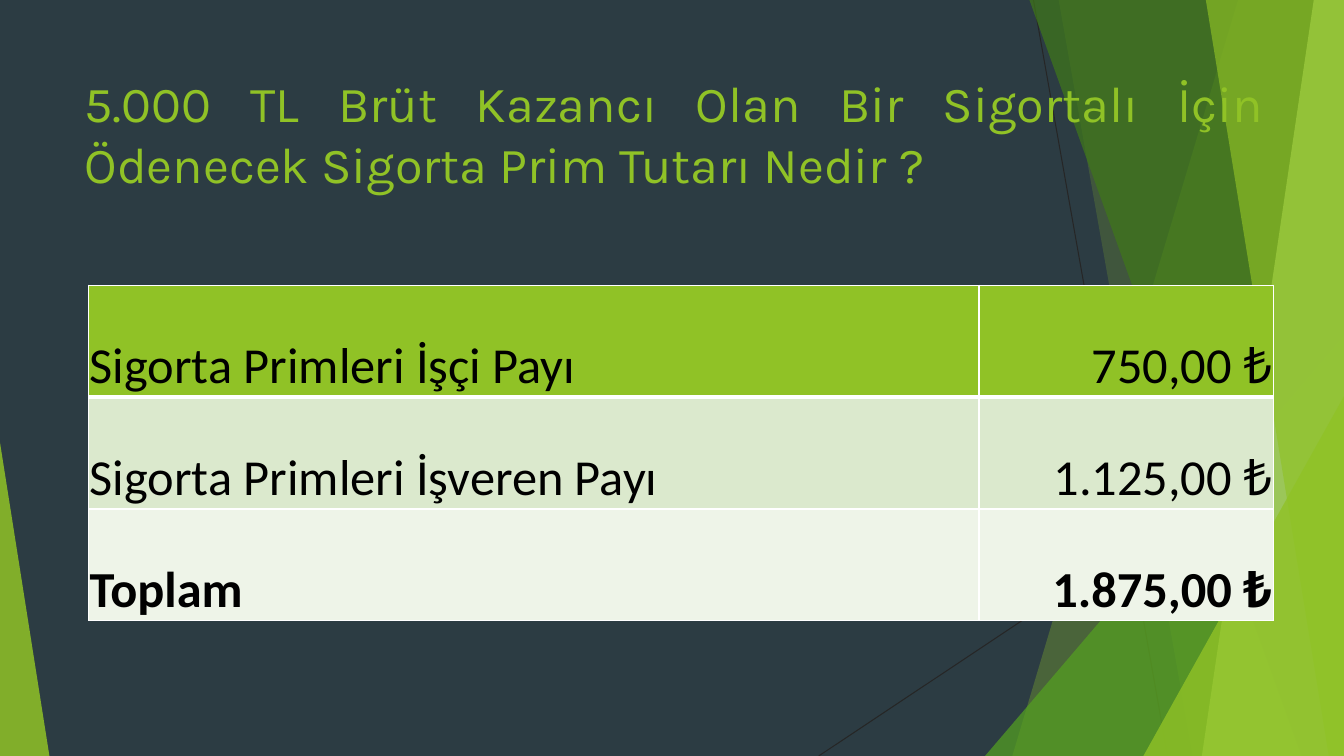
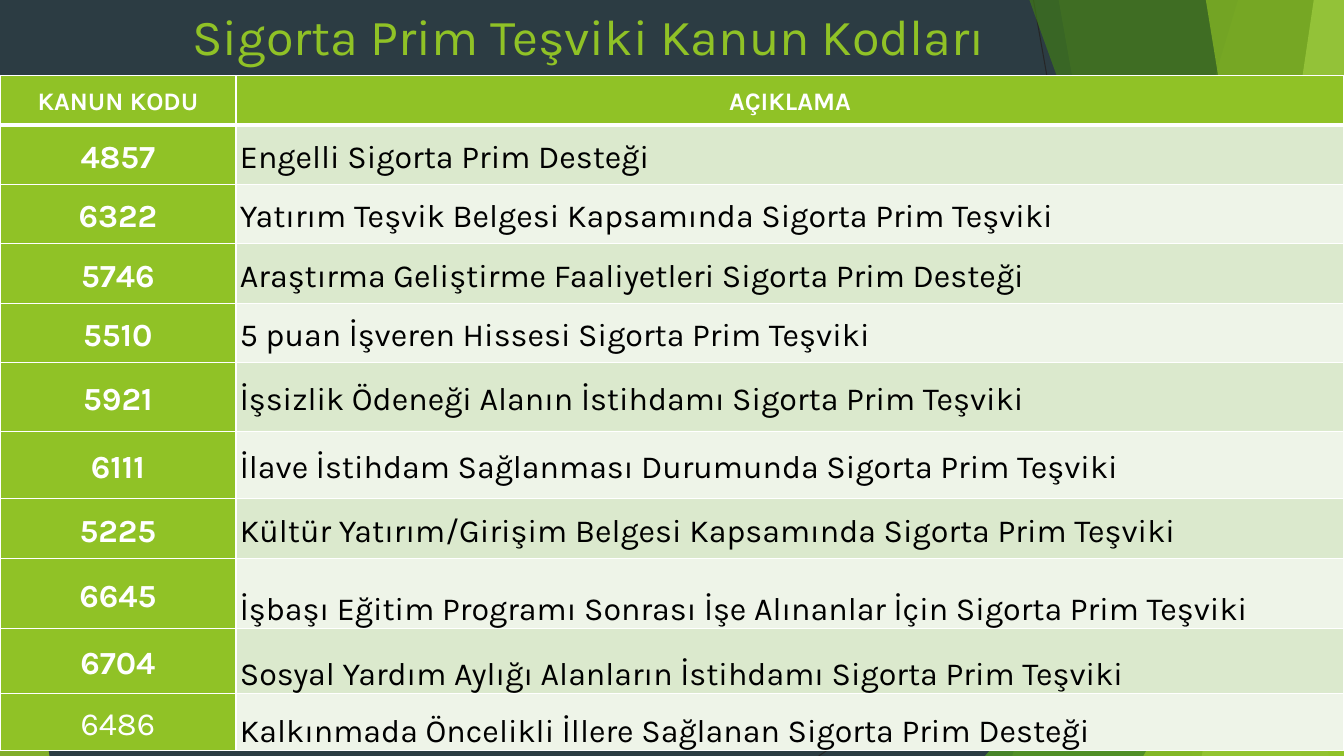
from lxml import etree
from pptx import Presentation
from pptx.dml.color import RGBColor
from pptx.enum.shapes import MSO_CONNECTOR, MSO_SHAPE
from pptx.enum.text import MSO_ANCHOR, PP_ALIGN
from pptx.oxml.ns import qn
from pptx.util import Emu, Pt

PX = 9144
WIDTH, HEIGHT = 1333, 750

NAVY = RGBColor(0x2C, 0x3C, 0x43)
GREEN = RGBColor(0x90, 0xC2, 0x26)
LEAF = RGBColor(0x54, 0xA0, 0x21)
FOREST = RGBColor(0x3F, 0x78, 0x19)
LIME = RGBColor(0xC0, 0xE4, 0x74)
BAND = RGBColor(0xDB, 0xE9, 0xCD)
PALE = RGBColor(0xEE, 0xF4, 0xE8)
CHARCOAL = RGBColor(0x26, 0x26, 0x26)
WHITE = RGBColor(0xFF, 0xFF, 0xFF)
BLACK = RGBColor(0x00, 0x00, 0x00)

STRAIGHT = MSO_CONNECTOR.STRAIGHT
PEAK = MSO_SHAPE.ISOSCELES_TRIANGLE
TOP, MIDDLE, BOTTOM = MSO_ANCHOR.TOP, MSO_ANCHOR.MIDDLE, MSO_ANCHOR.BOTTOM
LEFT, CENTER, RIGHT, JUSTIFY = PP_ALIGN.LEFT, PP_ALIGN.CENTER, PP_ALIGN.RIGHT, PP_ALIGN.JUSTIFY

LINES = [(1025, 0, 1158, HEIGHT), (WIDTH, 403, 812, HEIGHT)]
FACETS = [
    ("blade", (1228, 1004), GREEN, 30),
    ("blade", (1050, 1183), GREEN, 20),
    ("peak", (977, 333, 356, 417, 1), LEAF, 72),
    ("blade", (1021, 1291), FOREST, 70),
    ("blade", (1303, 1192), LIME, 70),
    ("blade", (1196, 1318), GREEN, 65),
    ("peak", (1134, 393, 199, 357, 1), GREEN, 80),
    ("peak", (0, 439, 49, 311, 0), GREEN, 85),
]


def px(n):
    return Emu(n * PX)


def apply(target, values):
    for name, value in values.items():
        setattr(target, name, value)


def text_format(color, size, name, bold=False, align=LEFT, spacing=None, anchor=MIDDLE, margins=(4, 0, 4, 0)):
    sides = ("margin_left", "margin_top", "margin_right", "margin_bottom")
    frame = {side: px(n) for side, n in zip(sides, margins)}
    return {
        "frame": {"vertical_anchor": anchor, **frame},
        "para": {"alignment": align, "line_spacing": spacing},
        "font": {"size": Pt(size), "name": name, "bold": bold},
        "color": color,
    }


def title_format(align):
    return text_format(GREEN, 36, "Karla", align=align, anchor=TOP, margins=(10, 5, 10, 5))


def amount_format(align, bold=False):
    return text_format(BLACK, 36, "Calibri", bold, align, None, BOTTOM, (1, 1, 1, 0))


def code_format(size=23, bold=True):
    return text_format(WHITE, size, "Karla", bold, CENTER, 1.15)


def law_format(anchor):
    return text_format(BLACK, 23, "Karla", spacing=1.15, anchor=anchor)


class Deck:
    """Hold the shared style and the slide being built."""

    def __init__(self):
        self.prs = Presentation()
        self.prs.slide_width, self.prs.slide_height = px(WIDTH), px(HEIGHT)
        fill = self.prs.slide_master.background.fill
        fill.solid()
        fill.fore_color.rgb = NAVY
        self.s = None

    def slide(self, title, box, align):
        self.s = self.prs.slides.add_slide(self.prs.slide_layouts[6])
        self.facets()
        tf = self.s.shapes.add_textbox(*map(px, box)).text_frame
        tf.word_wrap = True
        fmt = title_format(align)
        apply(tf, fmt["frame"])
        self.text(tf, title, fmt)

    def facets(self):
        shapes = self.s.shapes.add_group_shape().shapes
        for ends in LINES:
            self.line(shapes, ends)
        makers = {"blade": self.blade, "peak": self.peak}
        for kind, geometry, color, alpha in FACETS:
            sp = makers[kind](shapes, *geometry)
            self.paint(sp, color, alpha)

    def line(self, shapes, ends):
        sp = shapes.add_connector(STRAIGHT, *map(px, ends))
        sp.line.color.rgb = CHARCOAL
        sp.line.width = Pt(0.75)
        etree.SubElement(sp.element.spPr, qn("a:effectLst"))

    def blade(self, shapes, top, bottom):
        builder = shapes.build_freeform(top, 0, scale=PX)
        builder.add_line_segments([(WIDTH, 0), (WIDTH, HEIGHT), (bottom, HEIGHT)], close=True)
        return builder.convert_to_shape()

    def peak(self, shapes, x, y, w, h, apex):
        sp = shapes.add_shape(PEAK, px(x), px(y), px(w), px(h))
        sp.adjustments[0] = apex
        return sp

    def paint(self, sp, color, alpha):
        sp.shadow.inherit = False
        sp.fill.solid()
        sp.fill.fore_color.rgb = color
        sp.line.fill.background()
        clr = sp.element.spPr.find(".//" + qn("a:srgbClr"))
        etree.SubElement(clr, qn("a:alpha"), val=str(alpha * 1000))

    def text(self, tf, words, fmt):
        p = tf.paragraphs[0]
        apply(p, fmt["para"])
        r = p.add_run()
        r.text = words
        apply(r.font, fmt["font"])
        r.font.color.rgb = fmt["color"]

    def table(self, x, y, cols, rows, content, key_column=False):
        size = map(px, (x, y, sum(cols), sum(rows)))
        table = self.s.shapes.add_table(len(rows), len(cols), *size).table
        for col, width in zip(table.columns, cols):
            col.width = px(width)
        for row, height in zip(table.rows, rows):
            row.height = px(height)
        for i, line in enumerate(content):
            for j, (words, fmt) in enumerate(line):
                cell = table.cell(i, j)
                green = i == 0 or (key_column and j == 0)
                apply(cell, fmt["frame"])
                self.borders(cell, 3 if i == 1 else 1, 3 if i == 0 else 1)
                cell.fill.solid()
                cell.fill.fore_color.rgb = GREEN if green else (PALE, BAND)[i % 2]
                self.text(cell.text_frame, words, fmt)

    def borders(self, cell, top, bottom):
        tc_pr = cell._tc.get_or_add_tcPr()
        for tag, width in (("a:lnL", 1), ("a:lnR", 1), ("a:lnT", top), ("a:lnB", bottom)):
            ln = etree.SubElement(tc_pr, qn(tag), w=str(Pt(width)))
            fill = etree.SubElement(ln, qn("a:solidFill"))
            etree.SubElement(fill, qn("a:srgbClr"), val=str(WHITE))


def premium_slide(deck):
    deck.slide(
        "5.000 TL Brüt Kazancı Olan Bir Sigortalı İçin Ödenecek Sigorta Prim Tutarı Nedir ?",
        (74, 67, 1189, 144),
        JUSTIFY,
    )
    amounts = [
        ("Sigorta Primleri İşçi Payı", "750,00 ₺", False),
        ("Sigorta Primleri İşveren Payı", "1.125,00 ₺", False),
        ("Toplam", "1.875,00 ₺", True),
    ]
    content = [
        [(label, amount_format(LEFT, bold)), (amount, amount_format(RIGHT, bold))]
        for label, amount, bold in amounts
    ]
    deck.table(88, 283, [883, 292], [111] * 3, content)


def codes_slide(deck):
    deck.slide("Sigorta Prim Teşviki Kanun Kodları", (181, 0, 940, 75), LEFT)
    laws = [
        ("4857", "Engelli Sigorta Prim Desteği", 59, MIDDLE),
        ("6322", "Yatırım Teşvik Belgesi Kapsamında Sigorta Prim Teşviki", 59, MIDDLE),
        ("5746", "Araştırma Geliştirme Faaliyetleri Sigorta Prim Desteği", 59, MIDDLE),
        ("5510", "5 puan İşveren Hissesi Sigorta Prim Teşviki", 59, MIDDLE),
        ("5921", "İşsizlik Ödeneği Alanın İstihdamı Sigorta Prim Teşviki", 68, MIDDLE),
        ("6111", "İlave İstihdam Sağlanması Durumunda Sigorta Prim Teşviki", 67, MIDDLE),
        ("5225", "Kültür Yatırım/Girişim Belgesi Kapsamında Sigorta Prim Teşviki", 59, MIDDLE),
        ("6645", "İşbaşı Eğitim Programı Sonrası İşe Alınanlar İçin Sigorta Prim Teşviki", 70, BOTTOM),
        ("6704", "Sosyal Yardım Aylığı Alanların İstihdamı Sigorta Prim Teşviki", 64, BOTTOM),
        ("6486", "Kalkınmada Öncelikli İllere Sağlanan Sigorta Prim Desteği", 57, BOTTOM),
    ]
    content = [[(head, code_format(18)) for head in ("KANUN KODU", "AÇIKLAMA")]]
    for code, law, _, anchor in laws:
        content.append([(code, code_format(bold=code != "6486")), (law, law_format(anchor))])
    heights = [49] + [height for _, _, height, _ in laws]
    deck.table(0, 75, [234, 1099], heights, content, key_column=True)


def main():
    deck = Deck()
    premium_slide(deck)
    codes_slide(deck)
    deck.prs.save("out.pptx")


if __name__ == "__main__":
    main()
